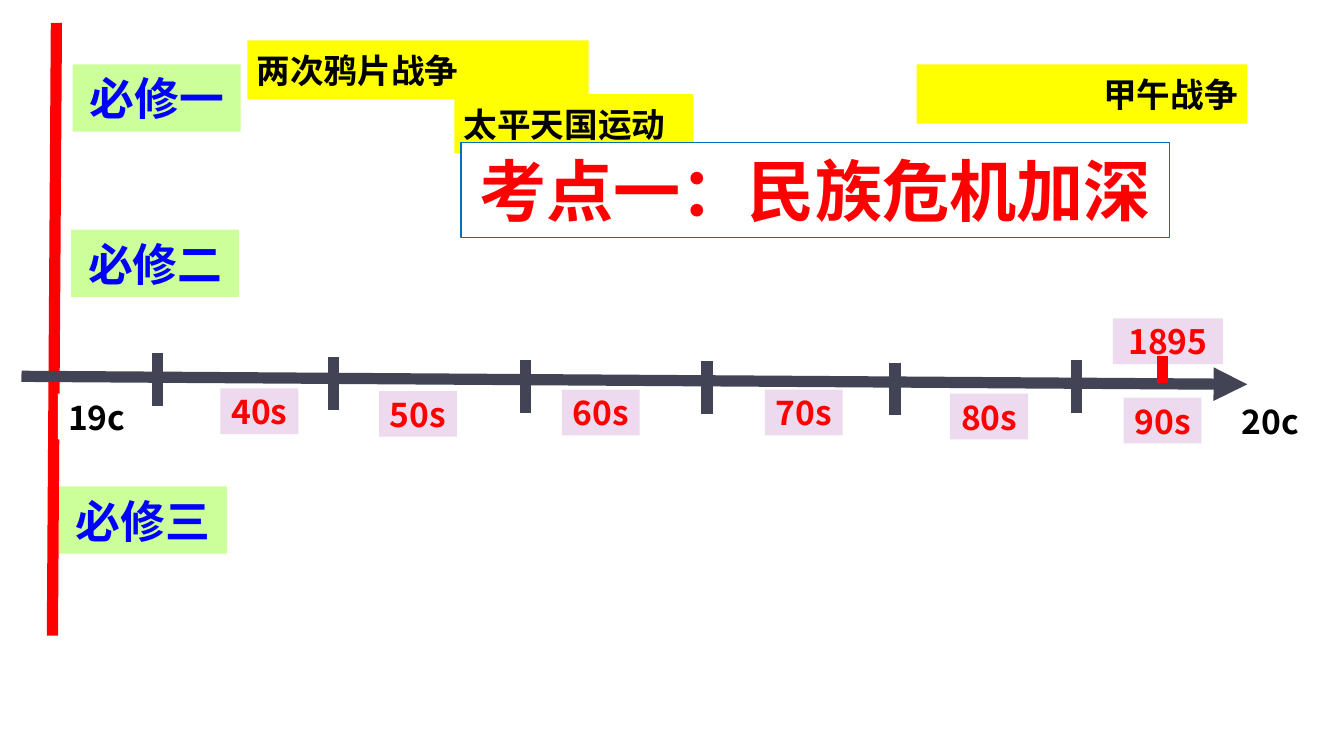
from dataclasses import dataclass

from lxml.etree import SubElement
from pptx import Presentation
from pptx.dml.color import RGBColor
from pptx.enum.shapes import MSO_CONNECTOR, MSO_SHAPE
from pptx.enum.text import MSO_ANCHOR, MSO_AUTO_SIZE, PP_ALIGN
from pptx.oxml import parse_xml
from pptx.oxml.ns import nsdecls, qn
from pptx.util import Inches, Pt


@dataclass(frozen=True)
class Theme:
    sans: str = "Noto Sans CJK SC"
    latin: str = "Arial"
    red: str = "FF0000"
    blue: str = "0000FF"
    black: str = "000000"
    white: str = "FFFFFF"
    axis: str = "424456"
    lilac: str = "EDDAEE"
    green: str = "CCFF99"
    yellow: str = "FFFF00"
    frame: str = "0070C0"
    title_size: int = 36
    book_size: int = 24
    label_size: int = 18
    stroke: int = 6


THEME = Theme()
LABEL_WIDTH, LABEL_HEIGHT = 0.58, 0.34
BOOK_SIZE = (1.25, 0.5)
EVENT_HEIGHT = 0.44
TICK_LENGTH = 0.39

# Left and top of each box; centre and top of each tick
BOOKS = [("必修一", 0.54, 0.48), ("必修二", 0.53, 1.71), ("必修三", 0.44, 3.62)]
CENTURIES = [("19c", 0.43, 2.93), ("20c", 9.16, 2.96)]
DECADES = [("40s", 1.64, 2.89), ("50s", 2.82, 2.91), ("60s", 4.18, 2.9),
           ("70s", 5.69, 2.9), ("80s", 7.07, 2.93), ("90s", 8.36, 2.96)]
TICKS = [(1.17, 2.63), (2.48, 2.66), (3.91, 2.68),
         (5.26, 2.69), (6.66, 2.7), (8.01, 2.68)]
EVENTS = [("两次鸦片战争", 1.84, 0.3, 2.54, PP_ALIGN.LEFT),
          ("太平天国运动", 3.38, 0.7, 1.78, PP_ALIGN.LEFT),
          ("甲午战争", 6.82, 0.48, 2.46, PP_ALIGN.RIGHT)]


def color(value):
    return RGBColor.from_string(value)


def write(box, text, *, size=THEME.label_size, ink=THEME.black,
          font=THEME.sans, align=PP_ALIGN.CENTER):
    para = box.text_frame.paragraphs[0]
    para.alignment = align
    span = para.add_run()
    span.text = text
    span.font.size = Pt(size)
    span.font.bold = True
    span.font.color.rgb = color(ink)
    span.font.name = font
    SubElement(span.font._element, qn("a:ea"), typeface=font)
    return span


def add_label(page, text, left, top, width=LABEL_WIDTH, height=LABEL_HEIGHT,
              *, fill=THEME.lilac, **text_format):
    box = page.shapes.add_shape(
        MSO_SHAPE.RECTANGLE, *map(Inches, (left, top, width, height)))
    box.shadow.inherit = False
    box.fill.solid()
    box.fill.fore_color.rgb = color(fill)
    box.line.fill.background()
    frame = box.text_frame
    frame.word_wrap = True
    frame.vertical_anchor = MSO_ANCHOR.MIDDLE
    frame.margin_left = frame.margin_right = Inches(0.07)
    frame.margin_top = frame.margin_bottom = Inches(0.04)
    write(box, text, **text_format)


def add_line(page, start, end, ink=THEME.axis, arrow=False):
    line = page.shapes.add_connector(
        MSO_CONNECTOR.STRAIGHT, *map(Inches, (*start, *end)))
    line.line.color.rgb = color(ink)
    line.line.width = Pt(THEME.stroke)
    if arrow:
        SubElement(line.line._get_or_add_ln(), qn("a:tailEnd"), type="triangle")
    SubElement(line._element.spPr, qn("a:effectLst"))


def add_title(page, text):
    """Fill the title placeholder and bring it in front of the events."""
    title = page.shapes.title
    title.left, title.top, title.width, title.height = map(
        Inches, (3.43, 1.06, 5.27, 0.71))
    title.fill.solid()
    title.fill.fore_color.rgb = color(THEME.white)
    title.line.color.rgb = color(THEME.frame)
    title.line.width = Pt(0.75)
    title.text_frame.word_wrap = False
    title.text_frame.auto_size = MSO_AUTO_SIZE.NONE
    title.text_frame.vertical_anchor = MSO_ANCHOR.TOP
    span = write(title, text, size=THEME.title_size, ink=THEME.red)
    outline = parse_xml(
        f'<a:ln {nsdecls("a")} w="{Pt(1.4)}"><a:solidFill>'
        f'<a:srgbClr val="{THEME.red}"/></a:solidFill></a:ln>')
    span.font._element.insert(0, outline)
    page.shapes.element.append(title.element)


def main():
    deck = Presentation()
    deck.slide_width = Inches(10)
    deck.slide_height = deck.slide_width * 9 // 16
    page = deck.slides.add_slide(deck.slide_layouts[5])

    add_line(page, (0.42, 0.17), (0.39, 4.73), THEME.red)
    add_line(page, (0.16, 2.8), (9.28, 2.86), arrow=True)
    for text, left, top in CENTURIES:
        add_label(page, text, left, top, fill=THEME.white)
    for x, top in TICKS:
        add_line(page, (x, top), (x, top + TICK_LENGTH))
    for text, left, top in DECADES:
        add_label(page, text, left, top, ink=THEME.red)
    add_label(page, "1895", 8.28, 2.37, 0.82, ink=THEME.red)
    add_line(page, (8.65, 2.65), (8.65, 2.85), THEME.red)

    for text, left, top in BOOKS:
        add_label(page, text, left, top, *BOOK_SIZE, fill=THEME.green,
                  size=THEME.book_size, ink=THEME.blue, font=THEME.latin)
    for text, left, top, width, align in EVENTS:
        add_label(page, text, left, top, width, EVENT_HEIGHT,
                  fill=THEME.yellow, font=THEME.latin, align=align)
    add_title(page, "考点一：民族危机加深")
    deck.save("out.pptx")


if __name__ == "__main__":
    main()
